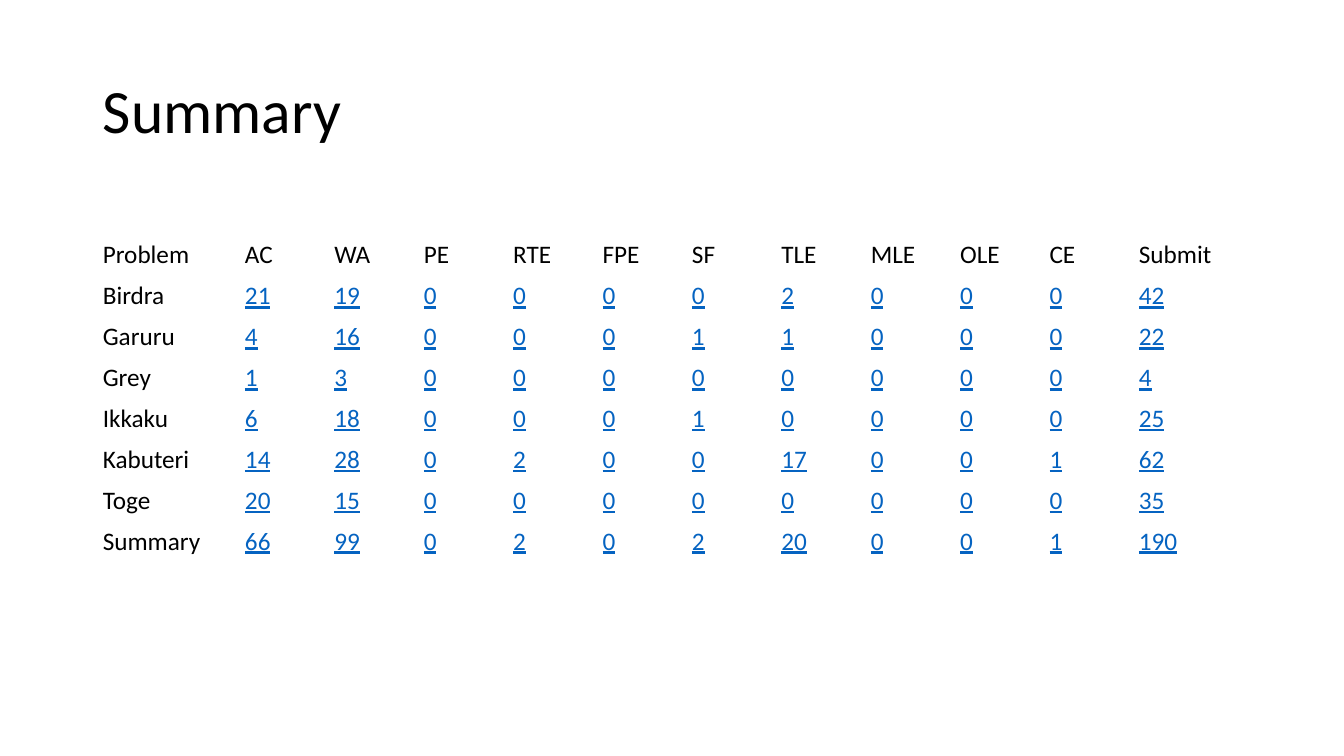
"""Build the summary slide with results for each problem."""
from pptx import Presentation
from pptx.dml.color import RGBColor
from pptx.enum.text import MSO_ANCHOR, PP_ALIGN
from pptx.util import Inches, Pt

COLORS = {"text": "000000", "link": "0563C1"}
HEADS = ["Problem", "AC", "WA", "PE", "RTE", "FPE", "SF", "TLE", "MLE", "OLE", "CE", "Submit"]
COUNTS = {
    "Birdra": [21, 19, 0, 0, 0, 0, 2, 0, 0, 0, 42],
    "Garuru": [4, 16, 0, 0, 0, 1, 1, 0, 0, 0, 22],
    "Grey": [1, 3, 0, 0, 0, 0, 0, 0, 0, 0, 4],
    "Ikkaku": [6, 18, 0, 0, 0, 1, 0, 0, 0, 0, 25],
    "Kabuteri": [14, 28, 0, 2, 0, 0, 17, 0, 0, 1, 62],
    "Toge": [20, 15, 0, 0, 0, 0, 0, 0, 0, 0, 35],
    "Summary": [66, 99, 0, 2, 0, 2, 20, 0, 0, 1, 190],
}
WIDTHS = [1.41] + [0.887] * 10 + [1.22]


def style(par, size, color):
    par.font.name = "Calibri"
    par.font.size = Pt(size)
    par.font.color.rgb = RGBColor.from_string(COLORS[color])
    par.alignment = PP_ALIGN.LEFT


deck = Presentation()
deck.slide_width, deck.slide_height = Inches(13.33), Inches(7.5)
slide = deck.slides.add_slide(deck.slide_layouts[5])

title = slide.shapes.title
title.left, title.top = Inches(0.92), Inches(0.4)
title.width, title.height = Inches(11.5), Inches(1.45)
title.text_frame.text = "Summary"
title.text_frame.vertical_anchor = MSO_ANCHOR.MIDDLE
head = title.text_frame.paragraphs[0]
head.line_spacing = 0.9
style(head, 44, "text")

rows = [HEADS] + [[name, *counts] for name, counts in COUNTS.items()]
frame = slide.shapes.add_table(
    len(rows), len(HEADS), Inches(0.92), Inches(2.33), Inches(11.5), Inches(3.2))
table = frame.table
table.first_row = table.horz_banding = False
for column, width in zip(table.columns, WIDTHS):
    column.width = Inches(width)

for r, row in enumerate(rows):
    for c, value in enumerate(row):
        cell = table.cell(r, c)
        cell.fill.background()
        cell.vertical_anchor = MSO_ANCHOR.MIDDLE
        cell.text = str(value)
        par = cell.text_frame.paragraphs[0]
        count = r > 0 and c > 0
        style(par, 18, "link" if count else "text")
        par.font.underline = count

deck.save("out.pptx")
